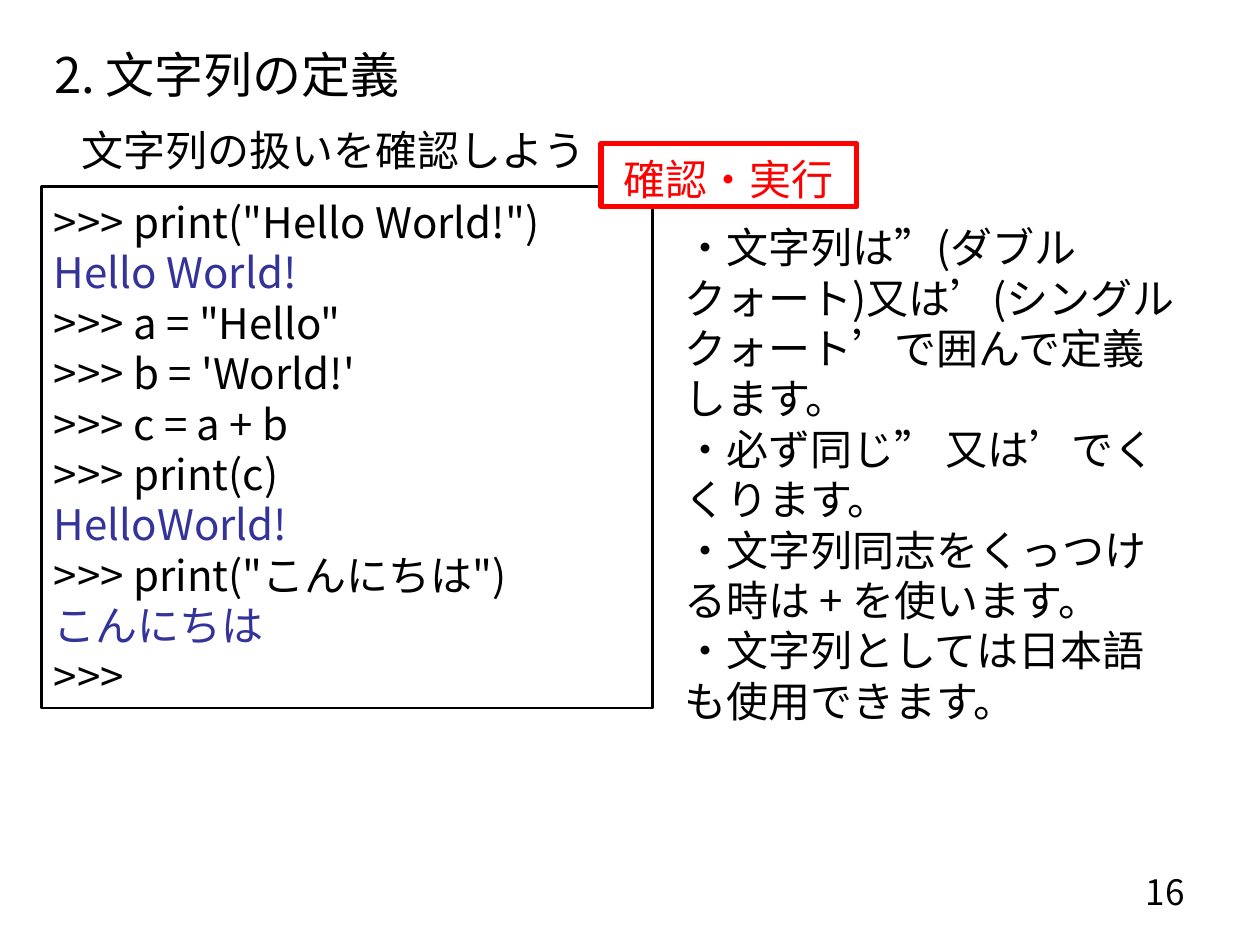
from lxml.etree import SubElement
from pptx import Presentation
from pptx.dml.color import RGBColor as RGB
from pptx.enum.shapes import MSO_SHAPE as Shape
from pptx.enum.text import MSO_ANCHOR as Anchor, MSO_AUTO_SIZE as Fit, PP_ALIGN as Align
from pptx.oxml.ns import qn
from pptx.util import Inches, Pt

BLACK = RGB(0x00, 0x00, 0x00)
WHITE = RGB(0xFF, 0xFF, 0xFF)
BLUE = RGB(0x33, 0x33, 0x99)
RED = RGB(0xFF, 0x00, 0x00)
SANS = "Noto Sans CJK JP"

CODE = [
    '>>> print("Hello World!")',
    "Hello World!",
    '>>> a = "Hello"',
    ">>> b = 'World!'",
    ">>> c = a + b",
    ">>> print(c)",
    "HelloWorld!",
    '>>> print("こんにちは")',
    "こんにちは",
    ">>>",
]
NOTES = [
    "・文字列は”(ダブルクォート)又は’(シングルクォート’で囲んで定義します。\v・必ず同じ” 又は’でくくります。",
    "・文字列同志をくっつける時は + を使います。",
    "・文字列としては日本語も使用できます。",
]


class Deck:
    def __init__(self):
        self.file = Presentation()
        self.file.slide_width = Inches(10)
        self.file.slide_height = Inches(7.5)
        self.slide = self.file.slides.add_slide(self.file.slide_layouts[1])

    def place(self, item, box):
        item.left, item.top, item.width, item.height = map(Inches, box)

    def fill_in(self, item, lines, size=24, ink=BLACK, align=Align.LEFT, face=SANS):
        frame = item.text_frame
        frame.word_wrap = True
        frame.auto_size = Fit.NONE
        frame.vertical_anchor = Anchor.TOP
        frame.margin_top = Inches(0.08)
        frame.margin_bottom = 0
        for i, line in enumerate(lines):
            par = frame.add_paragraph() if i else frame.paragraphs[0]
            par.text = line
            par.alignment = align
            par.space_before = Pt(0)
            par.line_spacing = Pt(size * 1.2)
            font = par.font
            font.size = Pt(size)
            font.color.rgb = ink(line) if callable(ink) else ink
            font.name = face
            base = par._p.pPr.find(qn("a:defRPr"))
            SubElement(base, qn("a:ea")).set("typeface", SANS)

    def title(self, box, text):
        item = self.slide.shapes.title
        self.place(item, box)
        self.fill_in(item, [text], size=28)

    def body(self, box, lines):
        item = self.slide.placeholders[1]
        self.place(item, box)
        self.fill_in(item, lines)
        for par in item.text_frame.paragraphs:
            prop = par._p.pPr
            prop.set("marL", "0")
            prop.set("indent", "0")
            prop.find(qn("a:defRPr")).addprevious(SubElement(prop, qn("a:buNone")))

    def text(self, box, line, **style):
        item = self.slide.shapes.add_textbox(*map(Inches, box))
        self.fill_in(item, [line], **style)

    def rect(self, box, lines, edge, width, fill=None, **style):
        item = self.slide.shapes.add_shape(Shape.RECTANGLE, *map(Inches, box))
        item.shadow.inherit = False
        if fill is None:
            item.fill.background()
        else:
            item.fill.solid()
            item.fill.fore_color.rgb = fill
        item.line.color.rgb = edge
        item.line.width = Pt(width)
        self.fill_in(item, lines, **style)


def shade(line):
    return BLACK if line.startswith(">>>") else BLUE


def main():
    deck = Deck()
    deck.text((7.17, 6.83, 2.33, 0.52), "16", size=20, align=Align.RIGHT)
    deck.title((0.33, 0.27, 8.89, 0.57), "2. 文字列の定義")
    deck.rect((0.33, 1.48, 4.85, 4.14), CODE, BLACK, 1.5, ink=shade)
    deck.text((0.55, 0.91, 7.67, 0.5), "文字列の扱いを確認しよう")
    deck.body((5.33, 1.68, 4.17, 3.74), NOTES)
    deck.rect((4.77, 1.14, 2.03, 0.5), ["確認・実行"], RED, 3, fill=WHITE,
              ink=RED, align=Align.CENTER, face="Arial")
    deck.file.save("out.pptx")


if __name__ == "__main__":
    main()
